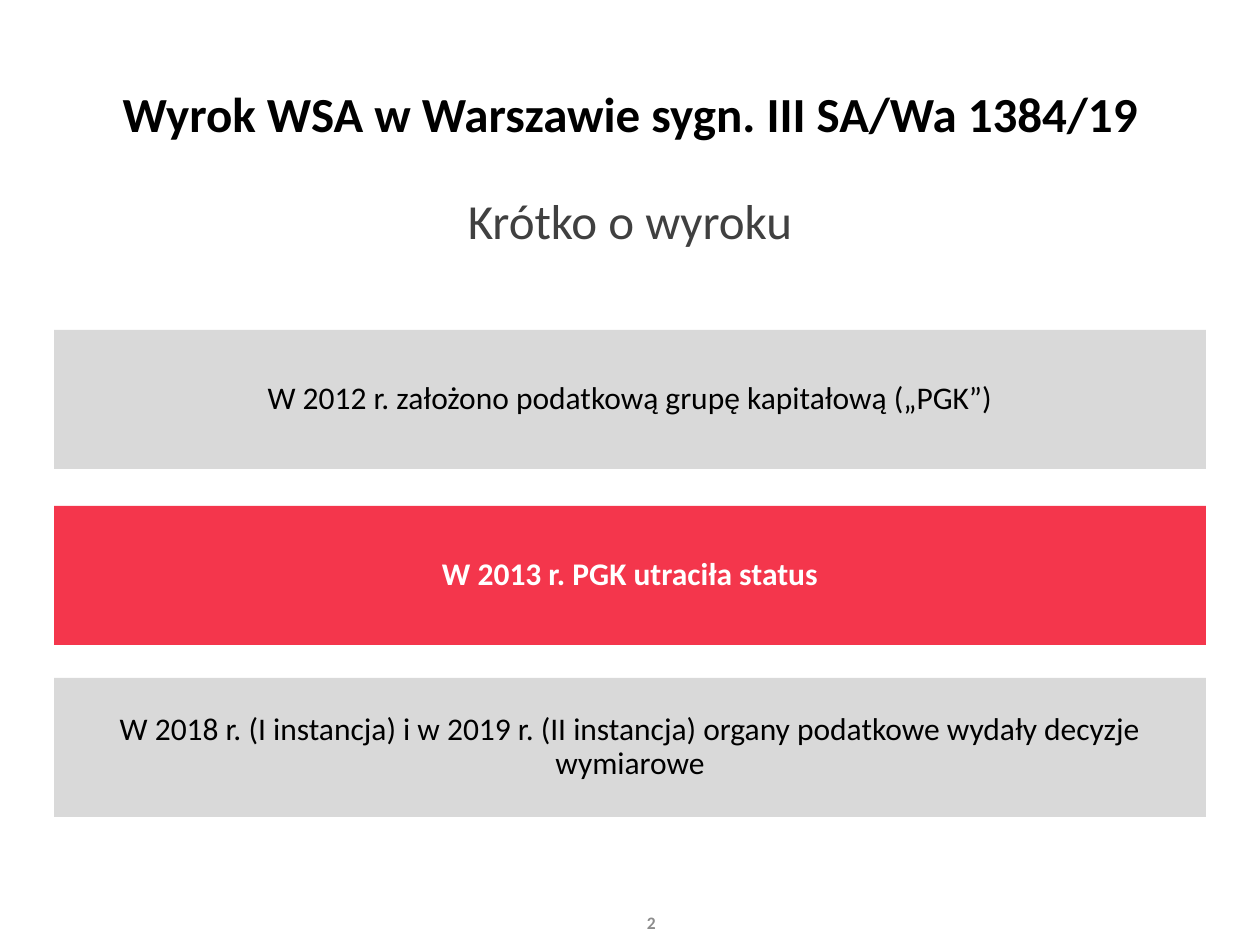
from pptx import Presentation
from pptx.dml.color import RGBColor
from pptx.enum.shapes import MSO_SHAPE
from pptx.enum.text import MSO_ANCHOR, PP_ALIGN
from pptx.util import Inches, Pt

PX = Inches(1) / 126


def px(*sizes):
    return [round(size * PX) for size in sizes]


def write(shape, text, size=18, color="000000", bold=False,
          align=PP_ALIGN.CENTER, lines=0.9):
    frame = shape.text_frame
    frame.word_wrap = True
    frame.vertical_anchor = MSO_ANCHOR.MIDDLE
    para = frame.paragraphs[0]
    para.text = text
    para.alignment = align
    para.line_spacing = lines
    para.space_before = Pt(0)
    font = para.runs[0].font
    font.name = "Calibri"
    font.size = Pt(size)
    font.bold = bold
    font.color.rgb = RGBColor.from_string(color)


deck = Presentation()
deck.slide_width, deck.slide_height = px(1260, 945)
slide = deck.slides.add_slide(deck.slide_layouts[5])
shapes = slide.shapes

# Title
title = shapes.title
title.left, title.top, title.width, title.height = px(0, 77, 1260, 86)
write(title, "Wyrok WSA w Warszawie sygn. III SA/Wa 1384/19", size=28, bold=True)
title.text_frame.margin_top = 0
title.text_frame.margin_bottom = Inches(0.05)

# Page number
number = shapes.add_textbox(*px(592, 898, 76, 50))
write(number, "2", size=10, color="8C8C8C", bold=True,
      align=PP_ALIGN.RIGHT, lines=1.0)

# Subtitle
lead = shapes.add_textbox(*px(0, 131, 1260, 185))
write(lead, "Krótko o wyroku", size=28, color="404040")

# Timeline bars, the key event in red
events = [
    (330, "W 2012 r. założono podatkową grupę kapitałową („PGK”)", False),
    (506, "W 2013 r. PGK utraciła status", True),
    (678, "W 2018 r. (I instancja) i w 2019 r. (II instancja) "
          "organy podatkowe wydały decyzje wymiarowe", False),
]
for top, text, key in events:
    bar = shapes.add_shape(MSO_SHAPE.RECTANGLE, *px(54, top, 1152, 139))
    bar.shadow.inherit = False
    bar.fill.solid()
    bar.fill.fore_color.rgb = RGBColor.from_string("F4364C" if key else "D9D9D9")
    bar.line.fill.background()
    write(bar, text, color="FFFFFF" if key else "000000", bold=key)

deck.save("out.pptx")
